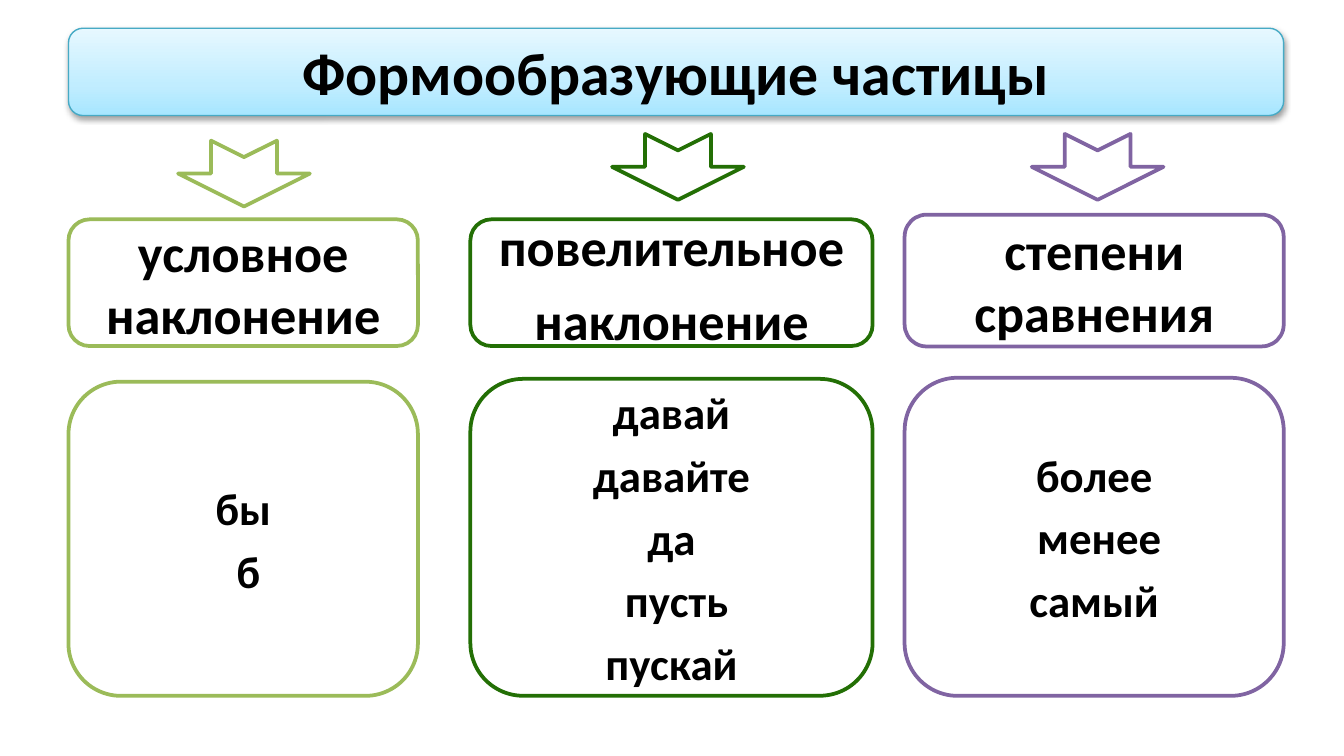
from dataclasses import dataclass

from lxml import etree
from pptx import Presentation
from pptx.dml.color import RGBColor as Rgb
from pptx.enum import shapes as s, text as t
from pptx.oxml import parse_xml
from pptx.util import Pt

NS = 'xmlns:a="http://schemas.openxmlformats.org/drawingml/2006/main"'


@dataclass(frozen=True)
class Theme:
    font: str = "Calibri"
    ink: str = "000000"
    paper: str = "FFFFFF"
    lime: str = "9BBB59"
    green: str = "236F05"
    plum: str = "8064A2"
    edge: str = "46AAC5"
    sky: tuple = ((0, "A7E6FF"), (35, "C1EDFF"), (100, "E7F8FF"))
    title: int = 32
    head: int = 28
    item: int = 24
    thin: float = 0.75
    thick: float = 2


LOOK = Theme()


def write(frame, lines, size):
    """Fill a frame with centred bold paragraphs."""
    frame.text = "\n".join(lines)
    frame.word_wrap = True
    frame.auto_size = t.MSO_AUTO_SIZE.NONE
    frame.vertical_anchor = t.MSO_ANCHOR.MIDDLE
    for para in frame.paragraphs:
        para.alignment = t.PP_ALIGN.CENTER
        para.space_before = Pt(size * 0.2)
        for run in para.runs:
            run.font.name, run.font.size, run.font.bold = LOOK.font, Pt(size), True
            run.font.color.rgb = Rgb.from_string(LOOK.ink)


def draw(slide, kind, box, color, width):
    """Add a white preset shape with a coloured outline."""
    shape = slide.shapes.add_shape(kind, *map(Pt, box))
    shape.shadow.inherit = False
    shape.fill.solid()
    shape.fill.fore_color.rgb = Rgb.from_string(LOOK.paper)
    shape.line.color.rgb = Rgb.from_string(color)
    shape.line.width = Pt(width)
    return shape


def banner(slide, box):
    """Glossy bar with the slide title on it."""
    bar = draw(slide, s.MSO_SHAPE.ROUNDED_RECTANGLE, box, LOOK.edge, LOOK.thin)
    props = bar.fill._xPr

    # Three-stop gradient, darkest at the bottom
    stops = "".join(f'<a:gs pos="{pos * 1000}"><a:srgbClr val="{color}"/></a:gs>'
                    for pos, color in LOOK.sky)
    grad = parse_xml(f'<a:gradFill {NS} rotWithShape="1"><a:gsLst>{stops}</a:gsLst>'
                     '<a:lin ang="16200000" scaled="0"/></a:gradFill>')
    solid = props.find("{*}solidFill")
    props.replace(solid, grad)

    # Soft shadow below
    glow = etree.SubElement(props.find("{*}effectLst"), grad.tag.replace("gradFill", "outerShdw"),
                            blurRad=str(Pt(3.1)), dist=str(Pt(1.6)), dir="5400000", rotWithShape="0")
    glow.append(parse_xml(f'<a:srgbClr {NS} val="{LOOK.ink}"><a:alpha val="38000"/></a:srgbClr>'))

    # Title placeholder, brought in front of the bar
    title = slide.shapes.title
    title.left, title.top, title.width, title.height = map(Pt, box)
    write(title.text_frame, ["Формообразующие частицы"], LOOK.title)
    bar._element.addnext(title._element)


def arrow(slide, mid, color):
    """Notched arrow pointing down, centred on mid."""
    wide, high = 35.3, 70.6
    box = (mid[0] - wide / 2, mid[1] - high / 2, wide, high)
    shape = draw(slide, s.MSO_SHAPE.NOTCHED_RIGHT_ARROW, box, color, LOOK.thick)
    shape.rotation = 90


def column(slide, box, color, head, items, high, start, tip):
    """Arrow, heading of the given height, and a list from start down to the box foot."""
    left, top, wide, full = box
    arrow(slide, tip, color)
    parts = ((top, high, head, LOOK.head),
             (top + start, full - start, items, LOOK.item))
    for y, tall, lines, size in parts:
        card = draw(slide, s.MSO_SHAPE.ROUNDED_RECTANGLE, (left, y, wide, tall),
                    color, LOOK.thick)
        write(card.text_frame, lines, size)


def main():
    deck = Presentation()
    deck.slide_width, deck.slide_height = Pt(720), Pt(405)
    slide = deck.slides.add_slide(deck.slide_layouts[5])

    banner(slide, (36.7, 15.1, 651, 46.8))
    column(slide, (36.7, 117.5, 187.2, 255.3), LOOK.lime,
           ["условное наклонение"], ["бы", " б"], 67.9, 87, (130.7, 93))
    column(slide, (252, 117.5, 215.5, 255.3), LOOK.green,
           ["повелительное", "наклонение"],
           ["давай", "давайте", "да", " пусть", "пускай"], 67.9, 85.5, (363.2, 89.4))
    column(slide, (484.6, 115, 203.1, 257.8), LOOK.plum,
           ["степени сравнения"], ["более", " менее", "самый"], 70.6, 87.4, (588, 89.4))
    deck.save("out.pptx")


if __name__ == "__main__":
    main()
